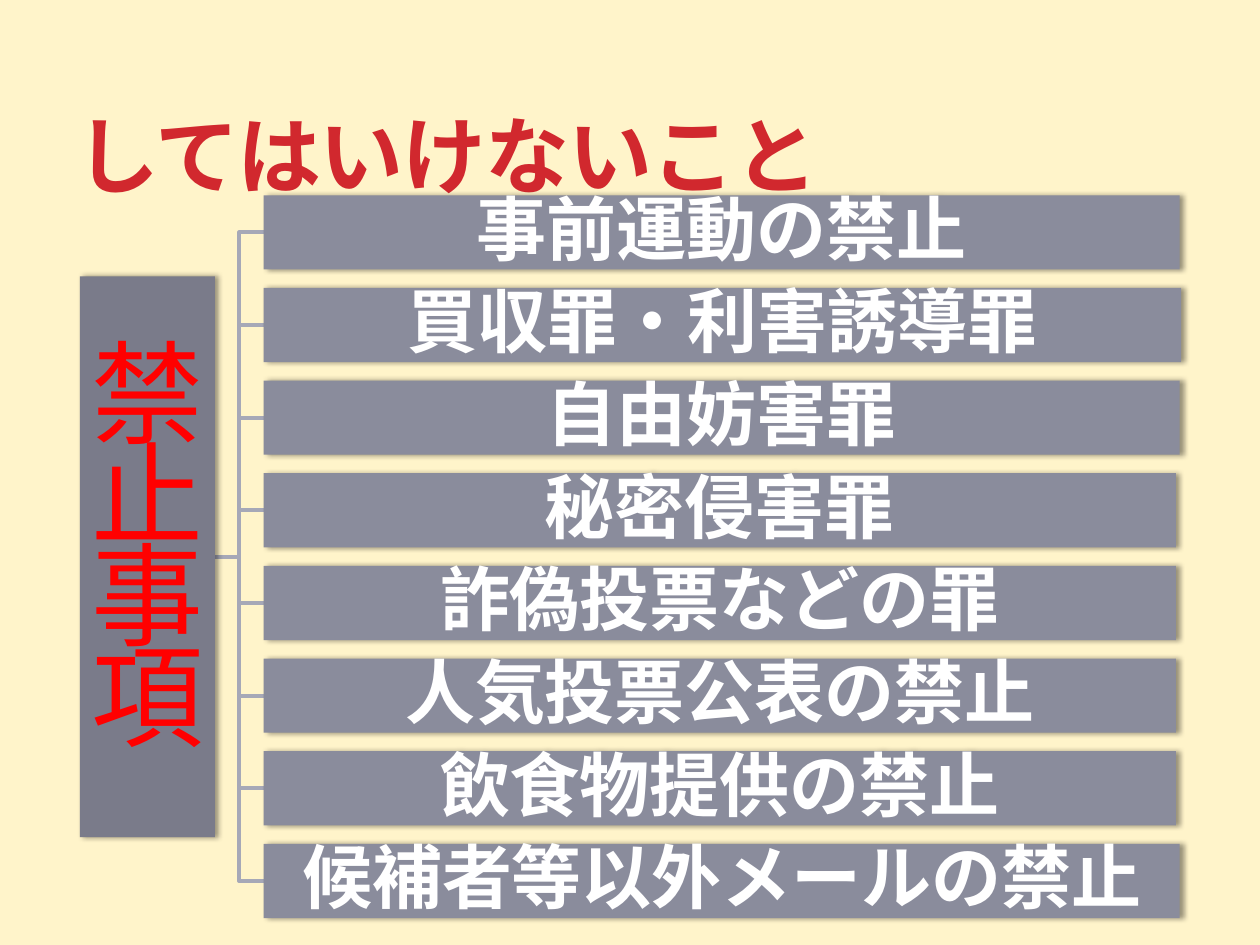
from lxml.etree import SubElement
from pptx import Presentation
from pptx.dml.color import RGBColor
from pptx.enum.shapes import MSO_SHAPE
from pptx.enum.text import MSO_ANCHOR, PP_ALIGN
from pptx.oxml.ns import qn
from pptx.util import Pt

TITLE = "してはいけないこと"
ROOT = "禁止事項"
ITEMS = [
    ("事前運動の禁止", 523.5),
    ("買収罪・利害誘導罪", 524.2),
    ("自由妨害罪", 523.5),
    ("秘密侵害罪", 521.3),
    ("詐偽投票などの罪", 521.3),
    ("人気投票公表の禁止", 521.3),
    ("飲食物提供の禁止", 521.3),
    ("候補者等以外メールの禁止", 523.5),
]

CREAM = RGBColor(0xFF, 0xF4, 0xCA)
CRIMSON = RGBColor(0xD1, 0x28, 0x2E)
RED = RGBColor(0xFF, 0x00, 0x00)
WHITE = RGBColor(0xFF, 0xFF, 0xFF)
ROOT_GRAY = RGBColor(0x7A, 0x7B, 0x8A)
BAR_GRAY = RGBColor(0x8A, 0x8C, 0x9C)
LINE_GRAY = RGBColor(0xA6, 0xA8, 0xB7)
JAPANESE = "Noto Sans CJK JP"

BAR_LEFT, BAR_TOP, BAR_HEIGHT, BAR_PITCH = 150.7, 111.6, 42.4, 52.95
ROOT_LEFT, ROOT_WIDTH, ROOT_HEIGHT = 45.6, 77.2, 320.4


def write(shape, text, *, size, color, font=JAPANESE, bold=False, align=PP_ALIGN.CENTER,
          anchor=MSO_ANCHOR.MIDDLE, line_spacing=0.9, inset=None, tracking=None):
    frame = shape.text_frame
    frame.word_wrap = True
    frame.vertical_anchor = anchor
    if inset is not None:
        frame.margin_left = frame.margin_right = Pt(inset)
        frame.margin_top = frame.margin_bottom = Pt(inset)
    paragraph = frame.paragraphs[0]
    paragraph.alignment = align
    paragraph.line_spacing = line_spacing
    run = paragraph.add_run()
    run.text = text
    run.font.name = font
    run.font.size = Pt(size)
    run.font.bold = bold
    run.font.color.rgb = color
    properties = run.font._element
    SubElement(properties, qn("a:ea"), typeface=JAPANESE)
    if tracking is not None:
        properties.set("spc", str(round(tracking * 100)))


def add_box(slide, left, top, width, height, fill):
    box = slide.shapes.add_shape(MSO_SHAPE.RECTANGLE, Pt(left), Pt(top), Pt(width), Pt(height))
    box.fill.solid()
    box.fill.fore_color.rgb = fill
    box.line.fill.background()
    box.shadow.inherit = False
    effects = box._element.spPr.find(qn("a:effectLst"))
    shadow = SubElement(effects, qn("a:outerShdw"), blurRad=str(Pt(3.1)), dist=str(Pt(1.8)),
                        dir="0", rotWithShape="0")
    shadow_color = SubElement(shadow, qn("a:srgbClr"), val="000000")
    SubElement(shadow_color, qn("a:alpha"), val="40000")
    return box


def add_branch(slide, start_x, start_y, end_x, end_y):
    middle_x = (start_x + end_x) / 2
    builder = slide.shapes.build_freeform(Pt(start_x), Pt(start_y))
    corners = [(middle_x, start_y), (middle_x, end_y), (end_x, end_y)]
    builder.add_line_segments([(Pt(x), Pt(y)) for x, y in corners], close=False)
    branch = builder.convert_to_shape()
    branch.fill.background()
    branch.line.color.rgb = LINE_GRAY
    branch.line.width = Pt(2.25)
    branch.shadow.inherit = False


def main():
    presentation = Presentation()
    presentation.slide_width, presentation.slide_height = Pt(720), Pt(540)
    slide = presentation.slides.add_slide(presentation.slide_layouts[6])
    slide.background.fill.solid()
    slide.background.fill.fore_color.rgb = CREAM

    title = slide.shapes.add_textbox(Pt(36), Pt(12.2), Pt(455.8), Pt(108))
    write(title, TITLE, size=48, color=CRIMSON, bold=True, align=PP_ALIGN.LEFT,
          anchor=MSO_ANCHOR.BOTTOM, line_spacing=1.0, tracking=-0.6)

    tops = [BAR_TOP + BAR_PITCH * row for row in range(len(ITEMS))]
    center_y = (tops[0] + tops[-1] + BAR_HEIGHT) / 2
    for top in reversed(tops):
        add_branch(slide, ROOT_LEFT + ROOT_WIDTH, center_y, BAR_LEFT, top + BAR_HEIGHT / 2)

    root = add_box(slide, ROOT_LEFT, center_y - ROOT_HEIGHT / 2, ROOT_WIDTH, ROOT_HEIGHT, ROOT_GRAY)
    write(root, ROOT, size=64, color=RED, font="Arial", line_spacing=0.75, inset=2.9)

    for (text, width), top in zip(ITEMS, tops):
        bar = add_box(slide, BAR_LEFT, top, width, BAR_HEIGHT, BAR_GRAY)
        write(bar, text, size=40, color=WHITE, bold=True, inset=2)

    presentation.save("out.pptx")


if __name__ == "__main__":
    main()
